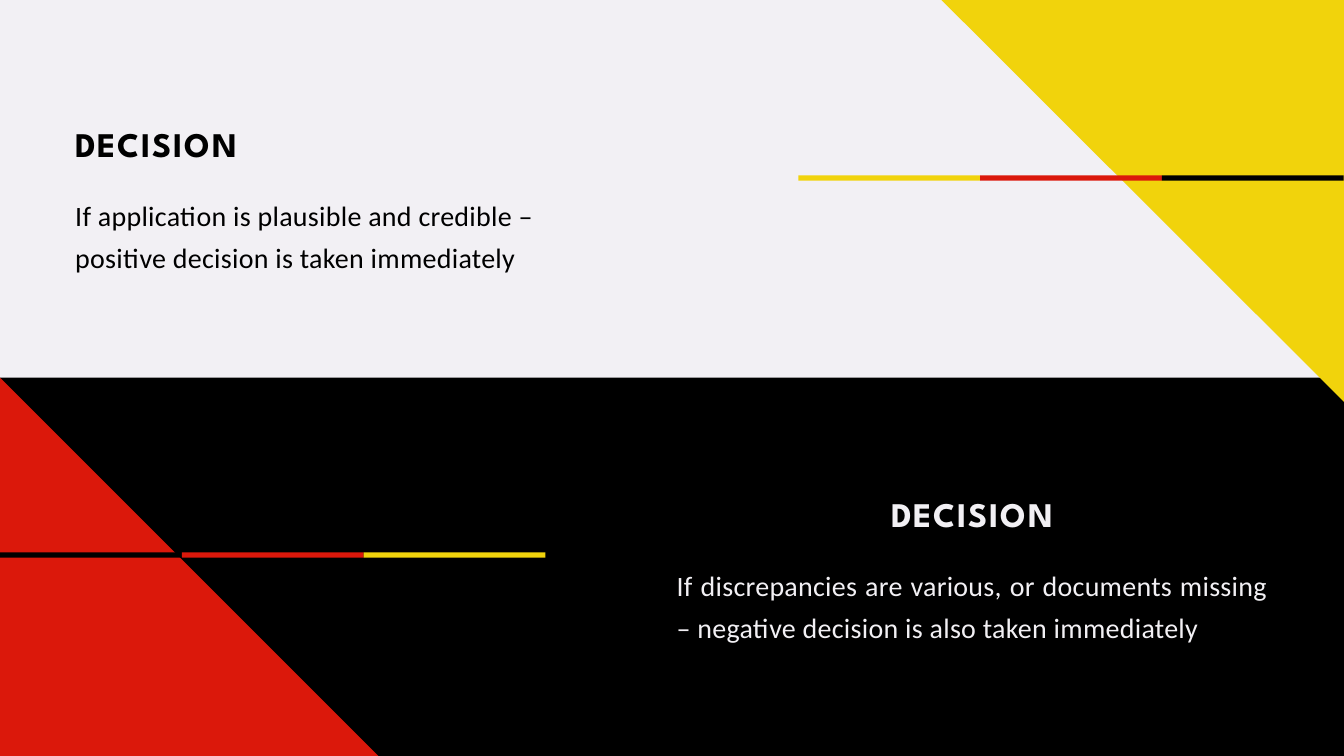
from pptx import Presentation
from pptx.dml.color import RGBColor
from pptx.enum.shapes import MSO_SHAPE
from pptx.enum.text import MSO_AUTO_SIZE, PP_ALIGN
from pptx.util import Inches, Pt

COLORS = {"light": "F2F0F4", "black": "000000", "yellow": "F1D30C", "red": "DB180B"}

prs = Presentation()
prs.slide_width, prs.slide_height = Inches(20), Inches(11.25)
s = prs.slides.add_slide(prs.slide_layouts[6])
s.background.fill.solid()
s.background.fill.fore_color.rgb = RGBColor.from_string(COLORS["light"])


def paint(sp, color):
    sp.shadow.inherit = False
    sp.fill.solid()
    sp.fill.fore_color.rgb = RGBColor.from_string(COLORS[color])
    sp.line.fill.background()


def add_text(x, y, h, lines, font, size, color, align, leading, spacing, bold=False):
    tf = s.shapes.add_textbox(Inches(x), Inches(y), Inches(8.8), Inches(h)).text_frame
    tf.word_wrap = True
    tf.auto_size = MSO_AUTO_SIZE.SHAPE_TO_FIT_TEXT
    tf.margin_left = tf.margin_right = tf.margin_top = tf.margin_bottom = 0
    for i, line in enumerate(lines):
        p = tf.paragraphs[0] if i == 0 else tf.add_paragraph()
        p.alignment = align
        p.line_spacing = Pt(leading)
        r = p.add_run()
        r.text = line
        r.font.name, r.font.size, r.font.bold = font, Pt(size), bold
        r.font.color.rgb = RGBColor.from_string(COLORS[color])
        r._r.get_or_add_rPr().set("spc", str(spacing))


# Lower black half
sp = s.shapes.add_shape(MSO_SHAPE.RECTANGLE, Inches(-0.15), Inches(5.62),
                        Inches(20.29), Inches(5.73))
paint(sp, "black")

# Decision texts: heading above, body one inch below
decisions = [
    (1.12, 1.83, "black", PP_ALIGN.JUSTIFY,
     ["If application is plausible and credible – ",
      "positive decision is taken immediately"]),
    (10.07, 7.34, "light", PP_ALIGN.CENTER,
     ["If discrepancies are various, or documents missing – "
      "negative decision is also taken immediately"]),
]
for x, y, color, heading_align, body in decisions:
    add_text(x, y + 1, 1.26, body, "Calibri", 30, color, PP_ALIGN.JUSTIFY, 45, 30)
    add_text(x, y, 0.62, ["DECISION"], "League Spartan", 37, color,
             heading_align, 44.4, 190, bold=True)

# Corner triangles
triangles = [
    ("yellow", [(14.01, 0), (20, 0), (20, 5.98)]),
    ("red", [(5.99, 11.61), (0, 11.61), (0, 5.62)]),
]
for color, points in triangles:
    corners = [(Inches(x), Inches(y)) for x, y in points]
    builder = s.shapes.build_freeform(*corners[0], scale=1.0)
    builder.add_line_segments(corners[1:], close=True)
    paint(builder.convert_to_shape(), color)

# Tricolour stripes
STRIPE_W = 2.705
stripes = [
    (11.88, 2.61, ["yellow", "red", "black"]),
    (0, 8.22, ["black", "red", "yellow"]),
]
for x, y, bands in stripes:
    for i, color in enumerate(bands):
        sp = s.shapes.add_shape(MSO_SHAPE.RECTANGLE, Inches(x + i * STRIPE_W), Inches(y),
                                Inches(STRIPE_W), Inches(0.08))
        paint(sp, color)

prs.save("out.pptx")
